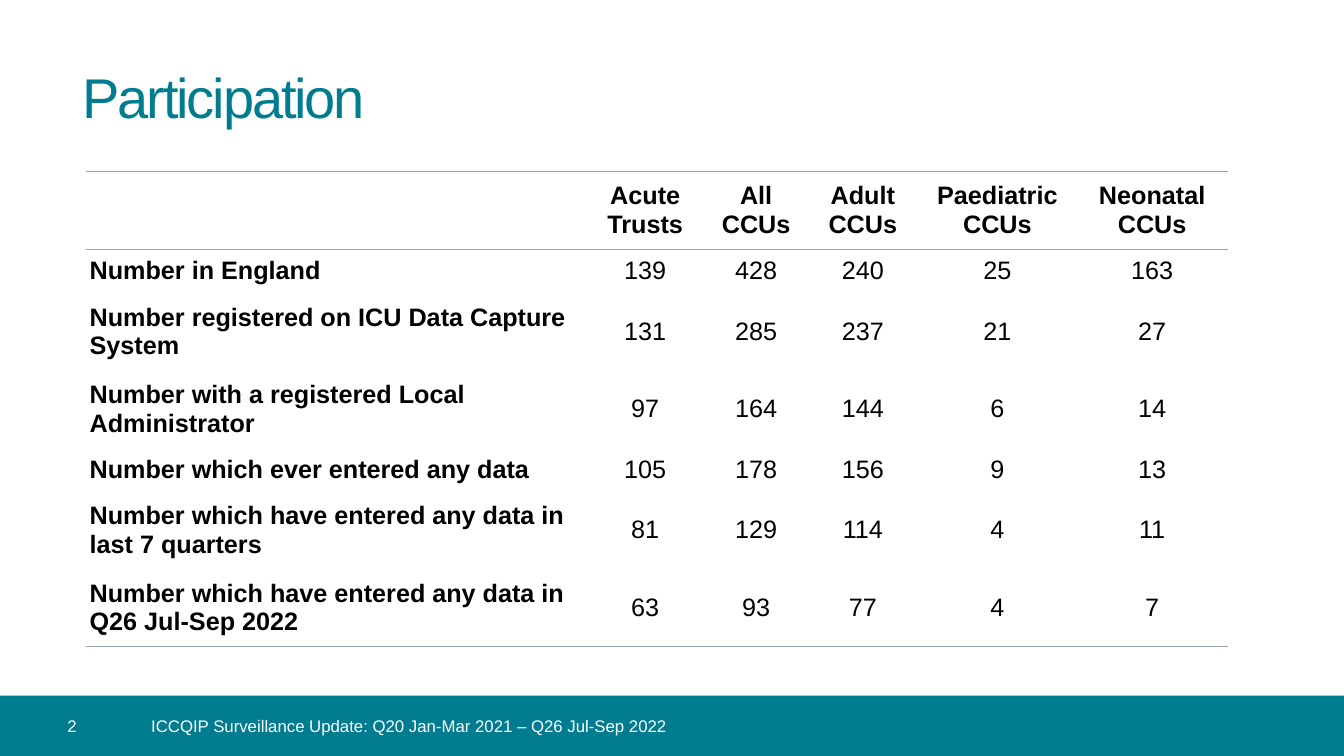
from dataclasses import dataclass

from lxml.etree import SubElement
from pptx import Presentation
from pptx.dml.color import RGBColor
from pptx.enum.shapes import MSO_SHAPE
from pptx.enum.text import MSO_ANCHOR as Anchor, PP_ALIGN as Align
from pptx.oxml.ns import qn
from pptx.util import Cm, Pt

TEAL = "007C91"
WHITE = "FFFFFF"
BLACK = "000000"
RULE_GREY = "98A4AE"
NO_STYLE = "{2D5ABB26-0587-4C30-8999-92F81FD0307C}"

SLIDE_WIDTH, SLIDE_HEIGHT = 33.87, 19.05
BAND_TOP, BAND_HEIGHT = 17.53, 1.52
COLUMN_WIDTHS = (12.6, 3.0, 2.59, 2.79, 3.99, 3.81)
ONE_LINE, TWO_LINES = 1.09, 1.96


@dataclass(frozen=True)
class TextLine:
    text: str
    left: float
    top: float
    width: float
    height: float
    size: float
    color: str
    indent: float = 0
    spacing: int = 0


@dataclass(frozen=True)
class ParticipationRow:
    label: str
    values: tuple
    height: float
    is_header: bool = False


TITLE = TextLine("Participation", 2.08, 1.52, 29.74, 1.8, 40, TEAL, spacing=-150)
PAGE_NUMBER = TextLine("2", 0, BAND_TOP, 3.3, BAND_HEIGHT, 12, WHITE, indent=1.7)
FOOTER = TextLine("ICCQIP Surveillance Update: Q20 Jan-Mar 2021 – Q26 Jul-Sep 2022",
                  3.33, BAND_TOP, 29.87, BAND_HEIGHT, 12, WHITE, indent=0.48)

ROWS = (
    ParticipationRow("", ("Acute Trusts", "All CCUs", "Adult CCUs", "Paediatric CCUs",
                          "Neonatal CCUs"), TWO_LINES, True),
    ParticipationRow("Number in England", (139, 428, 240, 25, 163), ONE_LINE),
    ParticipationRow("Number registered on ICU Data Capture System",
                     (131, 285, 237, 21, 27), TWO_LINES),
    ParticipationRow("Number with a registered Local Administrator",
                     (97, 164, 144, 6, 14), TWO_LINES),
    ParticipationRow("Number which ever entered any data", (105, 178, 156, 9, 13), ONE_LINE),
    ParticipationRow("Number which have entered any data in last 7 quarters",
                     (81, 129, 114, 4, 11), TWO_LINES),
    ParticipationRow("Number which have entered any data in Q26 Jul-Sep 2022",
                     (63, 93, 77, 4, 7), TWO_LINES),
)


def rgb(color: str) -> RGBColor:
    return RGBColor.from_string(color)


def format_font(font, size: float, color: str, bold: bool = False) -> None:
    font.name = "Arial"
    font.size = Pt(size)
    font.bold = bold
    font.color.rgb = rgb(color)


def draw_line_of_text(slide, line: TextLine) -> None:
    box = slide.shapes.add_textbox(Cm(line.left), Cm(line.top), Cm(line.width), Cm(line.height))
    frame = box.text_frame
    frame.word_wrap = True
    frame.vertical_anchor = Anchor.MIDDLE
    frame.margin_left = Cm(line.indent)
    frame.margin_top = frame.margin_right = frame.margin_bottom = 0
    frame.text = line.text
    run = frame.paragraphs[0].runs[0]
    format_font(run.font, line.size, line.color)
    if line.spacing:
        run.font._element.set("spc", str(line.spacing))


def draw_footer_band(slide) -> None:
    band = slide.shapes.add_shape(MSO_SHAPE.RECTANGLE, 0, Cm(BAND_TOP),
                                  Cm(SLIDE_WIDTH), Cm(BAND_HEIGHT))
    band.shadow.inherit = False
    band.fill.solid()
    band.fill.fore_color.rgb = rgb(TEAL)
    band.line.fill.background()


def add_rule(cell, edge: str) -> None:
    rule = SubElement(cell._tc.get_or_add_tcPr(), qn(f"a:{edge}"), w=str(Pt(1)))
    fill = SubElement(rule, qn("a:solidFill"))
    SubElement(fill, qn("a:srgbClr"), val=RULE_GREY)


def fill_cell(cell, text: str, bold: bool, align: Align, edges: tuple) -> None:
    cell.margin_left = cell.margin_right = cell.margin_top = cell.margin_bottom = Cm(0.1)
    cell.vertical_anchor = Anchor.MIDDLE
    cell.text_frame.text = text
    paragraph = cell.text_frame.paragraphs[0]
    paragraph.alignment = align
    for run in paragraph.runs:
        format_font(run.font, 18, BLACK, bold)
    for edge in edges:
        add_rule(cell, edge)
    cell.fill.background()


def draw_participation_table(slide) -> None:
    frame = slide.shapes.add_table(len(ROWS), len(COLUMN_WIDTHS), Cm(2.16), Cm(4.32),
                                   Cm(sum(COLUMN_WIDTHS)), Cm(sum(row.height for row in ROWS)))
    table = frame.table
    table.first_row = table.horz_banding = False
    table._tbl.tblPr.find(qn("a:tableStyleId")).text = NO_STYLE
    for column, width in zip(table.columns, COLUMN_WIDTHS):
        column.width = Cm(width)
    for row_index, row in enumerate(ROWS):
        table.rows[row_index].height = Cm(row.height)
        if row.is_header:
            edges = ("lnT", "lnB")
        else:
            edges = ("lnB",) if row is ROWS[-1] else ()
        for column_index, content in enumerate((row.label, *row.values)):
            is_label = column_index == 0
            fill_cell(table.cell(row_index, column_index), str(content),
                      is_label or row.is_header,
                      Align.LEFT if is_label else Align.CENTER, edges)


def main() -> None:
    deck = Presentation()
    deck.slide_width, deck.slide_height = Cm(SLIDE_WIDTH), Cm(SLIDE_HEIGHT)
    slide = deck.slides.add_slide(deck.slide_layouts[6])
    draw_line_of_text(slide, TITLE)
    draw_participation_table(slide)
    draw_footer_band(slide)
    for line in (PAGE_NUMBER, FOOTER):
        draw_line_of_text(slide, line)
    deck.save("out.pptx")


if __name__ == "__main__":
    main()
